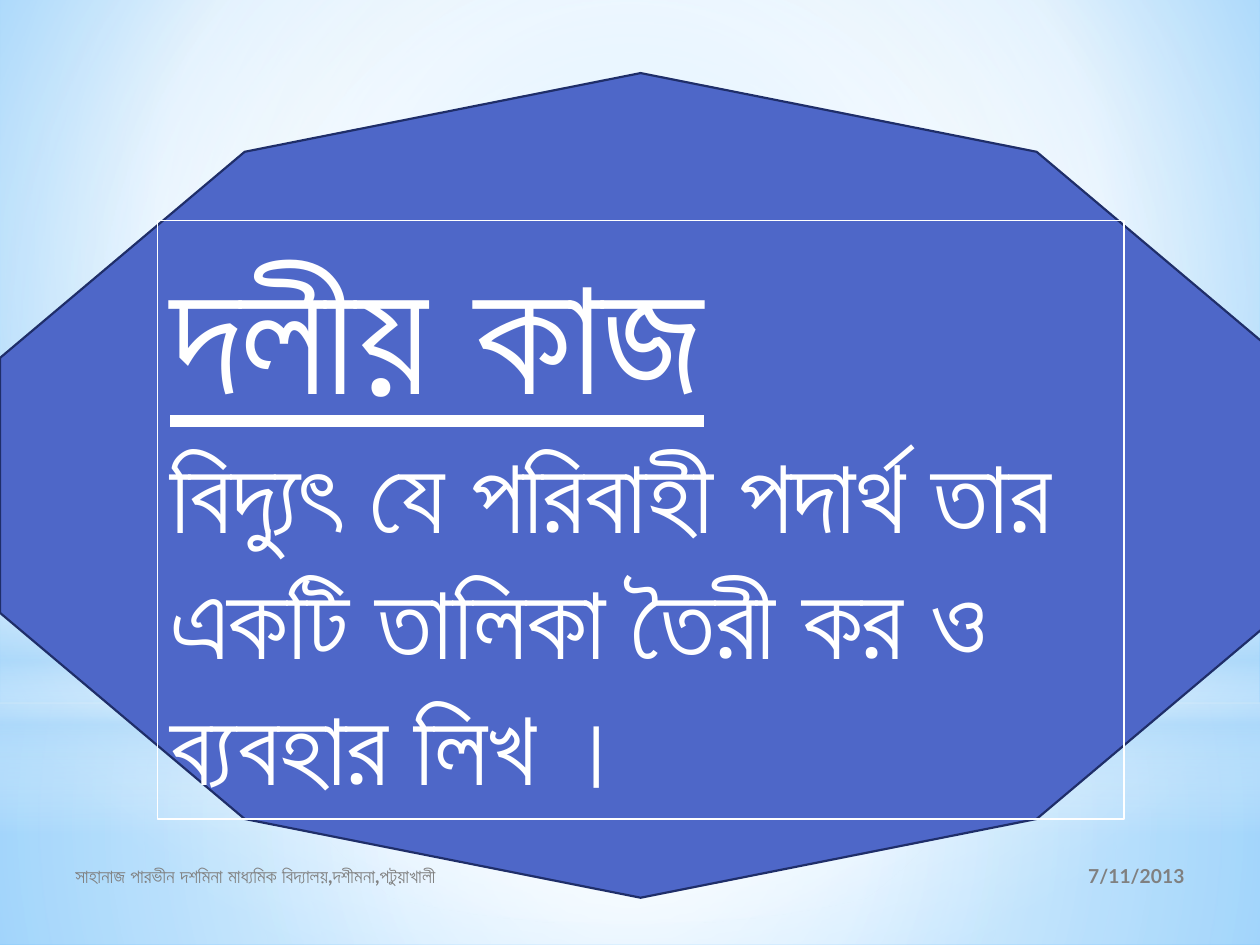
from dataclasses import dataclass
from typing import Optional

from pptx import Presentation
from pptx.dml.color import RGBColor
from pptx.enum.shapes import MSO_SHAPE
from pptx.enum.text import MSO_ANCHOR, MSO_AUTO_SIZE, PP_ALIGN
from pptx.oxml import parse_xml
from pptx.oxml.ns import nsdecls, qn
from pptx.util import Inches, Pt

RECT, OVAL, STAR = MSO_SHAPE.RECTANGLE, MSO_SHAPE.OVAL, MSO_SHAPE.STAR_5_POINT
LEFT, RIGHT = PP_ALIGN.LEFT, PP_ALIGN.RIGHT
TOP, MIDDLE = MSO_ANCHOR.TOP, MSO_ANCHOR.MIDDLE
NO_AUTOFIT = MSO_AUTO_SIZE.NONE


@dataclass(frozen=True)
class Theme:
    font: str = "Lato"
    white: str = "FFFFFF"
    pale: str = "B4DCFA"
    sky: str = "9ED5FF"
    deep_sky: str = "5BB9FF"
    panel: str = "4E67C8"
    panel_edge: str = "1F2E69"
    muted: str = "808080"
    heading_size: int = 96
    task_size: int = 60
    footer_size: int = 11


@dataclass(frozen=True)
class Gradient:
    stops: tuple  # (position %, colour, opacity %)
    focus: Optional[tuple] = (50, 50, 50, 50)  # None: runs top to bottom


@dataclass(frozen=True)
class Layer:
    kind: int
    box: tuple
    gradient: Gradient


@dataclass(frozen=True)
class Footer:
    text: str
    box: tuple
    align: int


THEME = Theme()
WHITE, PALE = THEME.white, THEME.pale

BACKGROUND = Gradient(
    ((0, THEME.sky, 100), (60, WHITE, 100), (100, THEME.deep_sky, 100)),
    (20, 10, 20, 60))

LAYERS = (
    Layer(RECT, (0, 5.58, 10, 1.92),
          Gradient(((0, WHITE, 91), (37, WHITE, 76), (100, PALE, 79)))),
    Layer(RECT, (0, 0, 10, 5.58),
          Gradient(((0, WHITE, 89), (48, WHITE, 62), (100, PALE, 79)))),
    Layer(RECT, (0, 4.12, 10, 2.5),
          Gradient(((0, WHITE, 0), (29, WHITE, 30), (45, PALE, 40),
                    (55, WHITE, 26), (65, PALE, 60), (100, WHITE, 0)), None)),
    Layer(OVAL, (0, 1.75, 10, 5.58),
          Gradient(((0, WHITE, 100), (56, WHITE, 0)))),
)

FOOTERS = (
    Footer("7/11/2013", (6.75, 6.75, 2.75, 0.4), RIGHT),
    Footer("সাহানাজ পারভীন দশমিনা মাধ্যমিক বিদ্যালয়,দশীমনা,পটুয়াখালী",
           (0.5, 6.75, 3.67, 0.4), LEFT),
)

HEADING = "দলীয় কাজ"
TASK = "বিদ্যুৎ যে পরিবাহী পদার্থ তার একটি তালিকা তৈরী কর ও ব্যবহার লিখ ।"


def inches(box: tuple) -> list:
    return [Inches(length) for length in box]


def apply_gradient(properties, gradient: Gradient) -> None:
    """Swap the empty fill of a shape or background for a gradient."""
    stops = "".join(
        f'<a:gs pos="{pos * 1000}"><a:srgbClr val="{colour}">'
        f'<a:alpha val="{opacity * 1000}"/></a:srgbClr></a:gs>'
        for pos, colour, opacity in gradient.stops)
    if gradient.focus:
        edges = " ".join(f'{side}="{value * 1000}"'
                         for side, value in zip("ltrb", gradient.focus))
        direction = f'<a:path path="circle"><a:fillToRect {edges}/></a:path>'
    else:
        direction = '<a:lin ang="5400000" scaled="0"/>'
    fill = parse_xml(f'<a:gradFill {nsdecls("a")} rotWithShape="1">'
                     f'<a:gsLst>{stops}</a:gsLst>{direction}</a:gradFill>')
    properties.replace(properties.find(qn("a:noFill")), fill)


def style_text(paragraph, size: int, colour: str, bold: bool,
               underline: bool = False, align: int = LEFT) -> None:
    paragraph.alignment = align
    for run in paragraph.runs:
        font = run.font
        font.name, font.size = THEME.font, Pt(size)
        font.bold, font.underline = bold, underline
        font.color.rgb = RGBColor.from_string(colour)


def draw_layer(slide, layer: Layer) -> None:
    shape = slide.shapes.add_shape(layer.kind, *inches(layer.box))
    shape.shadow.inherit = False
    shape.line.fill.background()
    shape.fill.background()
    apply_gradient(shape._element.spPr, layer.gradient)


def draw_footer(slide, footer: Footer) -> None:
    frame = slide.shapes.add_textbox(*inches(footer.box)).text_frame
    frame.word_wrap = True
    frame.vertical_anchor = MIDDLE
    frame.text = footer.text
    style_text(frame.paragraphs[0], THEME.footer_size, THEME.muted, True,
               align=footer.align)


def draw_panel(slide) -> None:
    """A five-point star at full inner radius makes a decagon."""
    panel = slide.shapes.add_shape(STAR, *inches((0, 0.58, 10.17, 5.92)))
    panel.shadow.inherit = False
    for index, value in enumerate((0.5, 1.05146, 1.10557)):
        panel.adjustments[index] = value
    panel.fill.solid()
    panel.fill.fore_color.rgb = RGBColor.from_string(THEME.panel)
    panel.line.color.rgb = RGBColor.from_string(THEME.panel_edge)
    panel.line.width = Pt(1.25)


def draw_task(slide) -> None:
    task = slide.shapes.title
    task.left, task.top, task.width, task.height = inches((1.25, 1.75, 7.67, 4.75))
    task.line.color.rgb = RGBColor.from_string(WHITE)
    task.line.width = Pt(0.75)
    frame = task.text_frame
    frame.word_wrap = True
    frame.auto_size = NO_AUTOFIT
    frame.vertical_anchor = TOP
    frame.text = f"{HEADING}\n{TASK}"
    heading, instruction = frame.paragraphs
    style_text(heading, THEME.heading_size, WHITE, True, underline=True)
    style_text(instruction, THEME.task_size, WHITE, False)
    # Bring the text in front of the panel
    slide.shapes._spTree.append(task._element)


def main() -> None:
    prs = Presentation()
    prs.slide_width, prs.slide_height = Inches(10), Inches(7.5)
    slide = prs.slides.add_slide(prs.slide_layouts[5])

    # Backdrop
    slide.background.fill.background()
    apply_gradient(slide._element.cSld.bg.bgPr, BACKGROUND)
    for layer in LAYERS:
        draw_layer(slide, layer)

    # Footer line, then the panel with its task
    for footer in FOOTERS:
        draw_footer(slide, footer)
    draw_panel(slide)
    draw_task(slide)
    prs.save("out.pptx")


if __name__ == "__main__":
    main()
